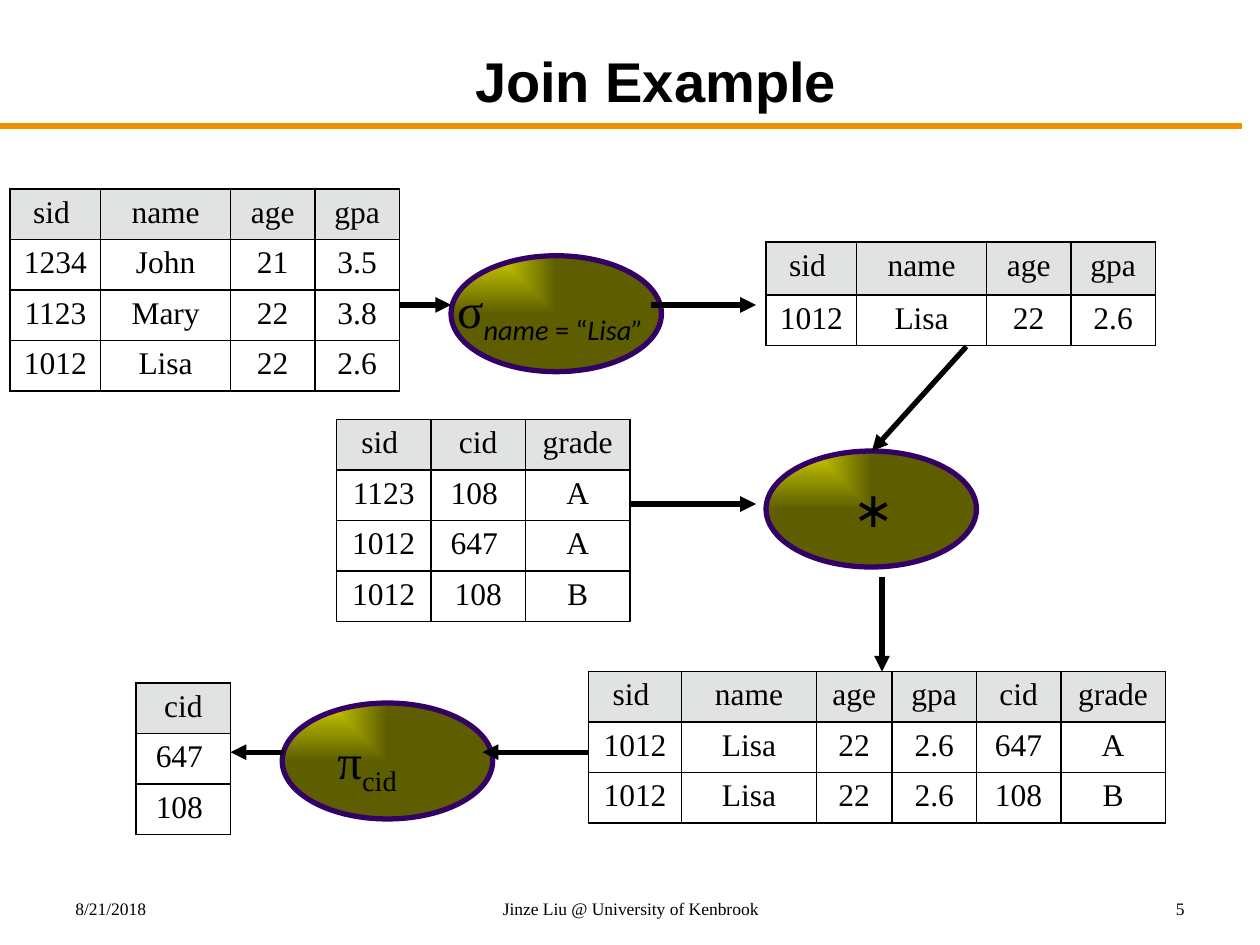
from lxml import etree
from pptx import Presentation
from pptx.dml.color import RGBColor
from pptx.enum.shapes import MSO_CONNECTOR, MSO_SHAPE
from pptx.enum.text import MSO_ANCHOR, PP_ALIGN
from pptx.oxml import parse_xml
from pptx.oxml.ns import nsdecls, qn
from pptx.util import Inches, Pt

COLORS = {"text": "000000", "rule": "EF9100", "header": "E1E3E3", "cell": "FFFFFF",
          "light": "CCCC00", "dark": "5E5E00", "outline": "330066"}
SERIF = "Times New Roman"
ROW = 0.4
STUDENT_COLS = [0.72, 1.03, 0.67, 0.67]
STUDENT_HEAD = ["sid ", "name", "age", "gpa"]


def rgb(name):
    return RGBColor.from_string(COLORS[name])


def style(r, size, font=SERIF, bold=None, italic=None):
    r.font.size, r.font.name = Pt(size), font
    r.font.bold, r.font.italic = bold, italic
    r.font.color.rgb = rgb("text")


def add_text(s, box, text, size, font=SERIF, align=PP_ALIGN.LEFT,
             anchor=MSO_ANCHOR.TOP, bold=None):
    tf = s.shapes.add_textbox(*map(Inches, box)).text_frame
    tf.word_wrap = True
    tf.vertical_anchor = anchor
    tf.text = text
    p = tf.paragraphs[0]
    p.alignment = align
    style(p.runs[0], size, font, bold)


def add_line(s, start, end, color="text", arrow=True):
    line = s.shapes.add_connector(MSO_CONNECTOR.STRAIGHT, *map(Inches, start + end))
    line.line.color.rgb = rgb(color)
    line.line.width = Pt(3)
    if arrow:
        etree.SubElement(line.line._get_or_add_ln(), qn("a:tailEnd"), type="triangle")
    etree.SubElement(line._element.spPr, qn("a:effectLst"))


def add_borders(cell):
    tcPr = cell._tc.get_or_add_tcPr()
    for i, side in enumerate("LRTB"):
        tcPr.insert(i, parse_xml(
            f'<a:ln{side} {nsdecls("a")} w="12700"><a:solidFill>'
            f'<a:srgbClr val="{COLORS["text"]}"/></a:solidFill></a:ln{side}>'))


def add_relation(s, x, y, cols, rows, head_height=ROW):
    """Bordered table whose first row is a shaded header."""
    heights = [head_height] + [ROW] * (len(rows) - 1)
    table = s.shapes.add_table(len(rows), len(cols), Inches(x), Inches(y),
                               Inches(sum(cols)), Inches(sum(heights))).table
    table.first_row = table.horz_banding = False
    for col, width in zip(table.columns, cols):
        col.width = Inches(width)
    for i, (values, height) in enumerate(zip(rows, heights)):
        table.rows[i].height = Inches(height)
        for j, value in enumerate(values):
            cell = table.cell(i, j)
            cell.text = value
            cell.fill.solid()
            cell.fill.fore_color.rgb = rgb("cell" if i else "header")
            add_borders(cell)
            p = cell.text_frame.paragraphs[0]
            p.alignment = PP_ALIGN.CENTER
            before = etree.SubElement(p._p.get_or_add_pPr(), qn("a:spcBef"))
            etree.SubElement(before, qn("a:spcPct"), val="20000")
            style(p.runs[0], 18)


def add_operator(s, x, y, label_box, symbol, font=SERIF, subscript=()):
    """Ellipse with a symbol; label_box is (dx, dy, width) and subscript holds (text, font, italic)."""
    oval = s.shapes.add_shape(MSO_SHAPE.OVAL, Inches(x), Inches(y), Inches(1.67), Inches(0.92))
    oval.shadow.inherit = False
    oval.line.color.rgb = rgb("outline")
    oval.line.width = Pt(3)
    oval.fill.gradient()
    for stop, name in zip(oval.fill.gradient_stops, ("light", "dark")):
        stop.color.rgb = rgb(name)
    grad = oval._element.spPr.find(qn("a:gradFill"))
    grad.replace(grad.find(qn("a:lin")), parse_xml(
        f'<a:path {nsdecls("a")} path="rect"><a:fillToRect r="100000" b="100000"/></a:path>'))

    dx, dy, width = label_box
    tf = s.shapes.add_textbox(Inches(x + dx), Inches(y + dy), Inches(width), Inches(0.57)).text_frame
    tf.word_wrap = False
    p = tf.paragraphs[0]
    r = p.add_run()
    r.text = symbol
    style(r, 28, font)
    for text, sub_font, italic in subscript:
        r = p.add_run()
        r.text = text
        style(r, 28, sub_font, italic=italic)
        r.font._element.set("baseline", "-25000")


def add_frame(s):
    """Title, rule and footer."""
    add_line(s, (0, 1), (9.86, 1), "rule", arrow=False)
    add_text(s, (1.08, 0.25, 8.25, 0.7), "Join Example", 32, "Arial",
             PP_ALIGN.CENTER, MSO_ANCHOR.BOTTOM, True)
    for x, width, text, align in [
            (0.5, 2.33, "8/21/2018", PP_ALIGN.LEFT),
            (3.42, 3.17, "Jinze Liu @ University of Kenbrook", PP_ALIGN.CENTER),
            (7.17, 2.33, "5", PP_ALIGN.RIGHT)]:
        add_text(s, (x, 7.08, width, 0.25), text, 10, align=align)


def add_selection(s, x, y):
    add_relation(s, x, y, STUDENT_COLS, [
        STUDENT_HEAD, ["1234", "John", "21", "3.5"],
        ["1123", "Mary", "22", "3.8"], ["1012", "Lisa", "22", "2.6"]])
    add_relation(s, x + 6, y + 0.42, STUDENT_COLS,
                 [STUDENT_HEAD, ["1012", "Lisa", "22", "2.6"]], 0.42)
    add_operator(s, x + 3.5, y + 0.53, (-0.05, 0.14, 1.97), "σ", subscript=[
        ("name", "Calibri", True), (" = “", "Calibri", False), ("Lisa”", "Calibri", True)])
    for start, end in [(3.09, 3.5), (5.09, 5.92)]:
        add_line(s, (x + start, y + 0.92), (x + end, y + 0.92))


def add_join(s, x, y):
    add_relation(s, x, y, [0.75, 0.75, 0.83], [
        ["sid ", "cid", "grade"], ["1123", "108 ", "A"],
        ["1012", "647 ", "A"], ["1012", "108", "B"]])
    add_operator(s, x + 3.41, y + 0.25, (0.59, 0.17, 0.4), "∗", "Lato")
    add_line(s, (x + 2.33, y + 0.67), (x + 3.33, y + 0.67))
    add_line(s, (x + 5, y - 0.58), (x + 4.25, y + 0.25))
    add_line(s, (x + 4.33, y + 1.25), (x + 4.33, y + 2))


def add_projection(s, x, y):
    add_relation(s, x + 3.59, y, [0.74, 1.07, 0.6, 0.67, 0.67, 0.83], [
        STUDENT_HEAD + ["cid", "grade"],
        ["1012", "Lisa", "22", "2.6", "647", "A"],
        ["1012", "Lisa", "22", "2.6", "108", "B"]])
    add_operator(s, x + 1.16, y + 0.25, (0.34, 0.17, 0.72), "π",
                 subscript=[("cid", SERIF, None)])
    for start, end in [(1.17, 0.75), (3.59, 2.75)]:
        add_line(s, (x + start, y + 0.64), (x + end, y + 0.64))
    add_relation(s, x, y + 0.09, [0.75], [["cid"], ["647 "], ["108 "]])


def main():
    prs = Presentation()
    prs.slide_width, prs.slide_height = Inches(10), Inches(7.5)
    s = prs.slides.add_slide(prs.slide_layouts[6])
    add_frame(s)
    add_selection(s, 0.08, 1.5)
    add_join(s, 2.67, 3.33)
    add_projection(s, 1.08, 5.33)
    prs.save("out.pptx")


if __name__ == "__main__":
    main()
